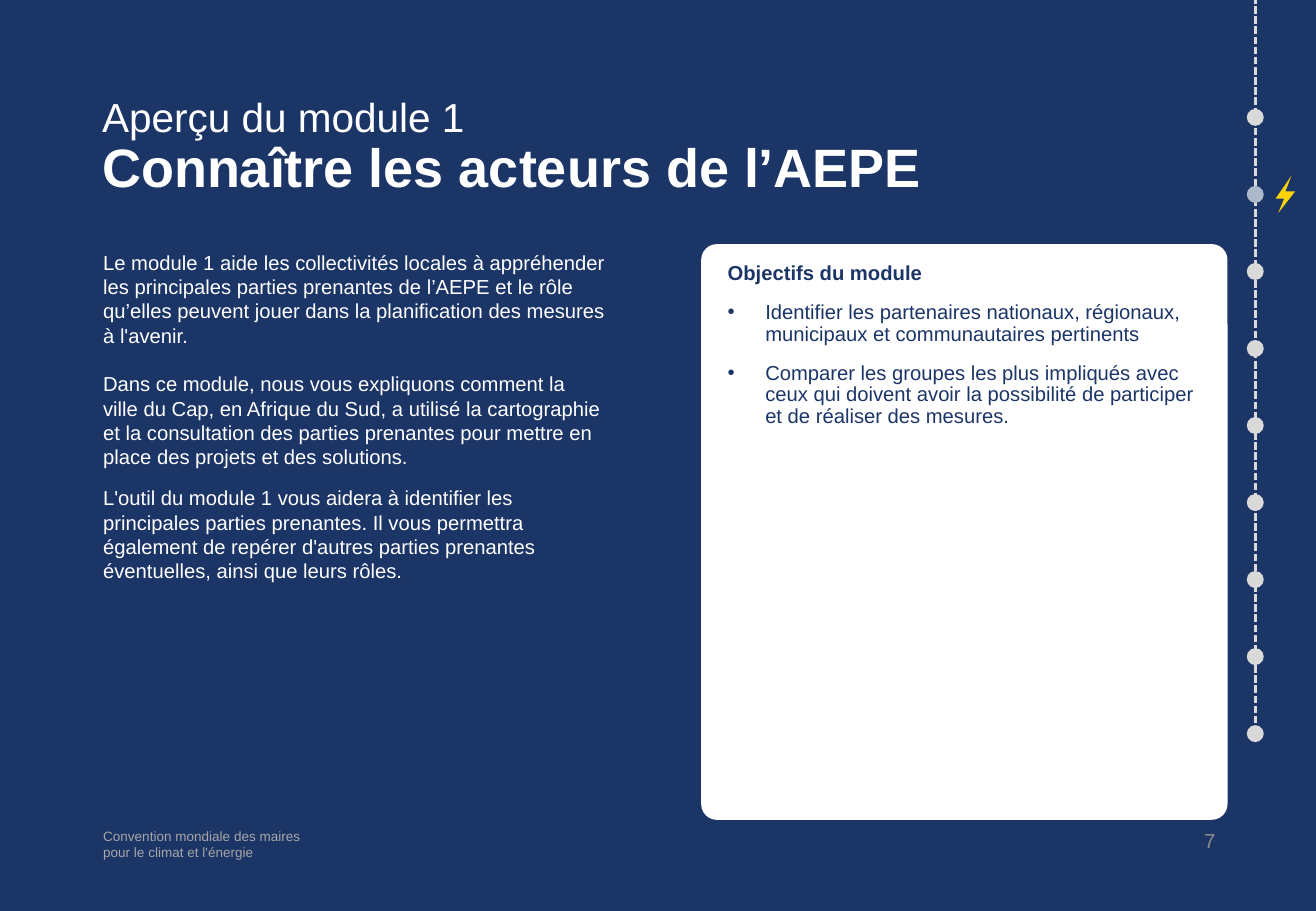
from dataclasses import dataclass

from lxml.etree import SubElement
from pptx import Presentation
from pptx.dml.color import RGBColor as RGB
from pptx.enum.dml import MSO_LINE as Dash
from pptx.enum.shapes import MSO_CONNECTOR as Link, MSO_SHAPE as Form
from pptx.enum.text import PP_ALIGN as Align
from pptx.oxml.ns import qn
from pptx.util import Inches, Pt


@dataclass(frozen=True)
class Theme:
    font: str = "Arial"
    navy: str = "1C3567"
    white: str = "FFFFFF"
    rail: str = "D9D9D9"
    stop: str = "ADB9CA"
    bolt: str = "FAD307"
    foot: str = "A6A6A6"
    page: str = "8C8C8C"
    head: int = 32
    lead: int = 24
    body: int = 12
    note: int = 8
    gap: int = 10
    tight: float = 0.9


@dataclass(frozen=True)
class Box:
    x: int
    y: int
    w: int
    h: int


THEME = Theme()
WIDTH, HEIGHT = Inches(10.83), Inches(7.5)
STOPS, ACTIVE = 9, 1
BOLT = [(0, 61), (81, 0), (50, 42), (100, 42), (13, 100), (44, 61)]

TITLE = ("Aperçu du module 1", "Connaître les acteurs de l’AEPE")
INTRO = [
    "Le module 1 aide les collectivités locales à appréhender les principales "
    "parties prenantes de l’AEPE et le rôle qu’elles peuvent jouer dans la "
    "planification des mesures à l'avenir.",
    "Dans ce module, nous vous expliquons comment la ville du Cap, en Afrique "
    "du Sud, a utilisé la cartographie et la consultation des parties "
    "prenantes pour mettre en place des projets et des solutions.",
    "L'outil du module 1 vous aidera à identifier les principales parties "
    "prenantes. Il vous permettra également de repérer d'autres parties "
    "prenantes éventuelles, ainsi que leurs rôles.",
]
GAPS = [0, 14.4, THEME.gap]
GOALS = [
    "Identifier les partenaires nationaux, régionaux, municipaux et "
    "communautaires pertinents",
    "Comparer les groupes les plus impliqués avec ceux qui doivent avoir la "
    "possibilité de participer et de réaliser des mesures.",
]
FOOT = "Convention mondiale des maires\vpour le climat et l'énergie"


def area(x, y, w, h):
    """Box given in percent of the slide's width and height."""
    return Box(*(int(part * side / 100) for part, side in
                 ((x, WIDTH), (y, HEIGHT), (w, WIDTH), (h, HEIGHT))))


def style(font, size, color, bold=False):
    font.name, font.size, font.bold = THEME.font, Pt(size), bold
    font.color.rgb = RGB.from_string(color)


def paint(shape, color):
    shape.shadow.inherit = False
    shape.fill.solid()
    shape.fill.fore_color.rgb = RGB.from_string(color)
    shape.line.fill.background()


def frame(slide, box):
    text = slide.shapes.add_textbox(box.x, box.y, box.w, box.h).text_frame
    text.word_wrap = True
    return text


def write(text, lines, size, color, gaps=(0,)):
    for i, (line, gap) in enumerate(zip(lines, gaps)):
        para = text.add_paragraph() if i else text.paragraphs[0]
        para.text = line
        para.space_before = Pt(gap)
        style(para.font, size, color)
    return text.paragraphs


def bullet(para):
    props = para._p.get_or_add_pPr()
    props.set("marL", str(Inches(0.31)))
    props.set("indent", str(-Inches(0.31)))
    SubElement(props, qn("a:buFont"), typeface=THEME.font)
    SubElement(props, qn("a:buChar"), char="•")


def title(slide, box):
    para = frame(slide, box).paragraphs[0]
    para.line_spacing = THEME.tight
    lead = para.add_run()
    lead.text = TITLE[0]
    style(lead.font, THEME.lead, THEME.white)
    para.add_line_break()
    head = para.add_run()
    head.text = TITLE[1]
    style(head.font, THEME.head, THEME.white, True)


def intro(slide, box):
    write(frame(slide, box), INTRO, THEME.body, THEME.white, GAPS)


def goals(slide, box):
    """White card with the module's objectives."""
    card = slide.shapes.add_shape(Form.ROUNDED_RECTANGLE,
                                  box.x, box.y, box.w, box.h)
    card.adjustments[0] = 0.03
    paint(card, THEME.white)
    text = card.text_frame
    text.word_wrap = True
    text.vertical_anchor = 1
    text.margin_left, text.margin_right = Inches(0.18), Inches(0.22)
    text.margin_top = text.margin_bottom = Inches(0.12)
    lines = ["Objectifs du module", *GOALS]
    paras = write(text, lines, THEME.body, THEME.navy,
                  [0] + [THEME.gap] * len(GOALS))
    for para in paras:
        para.alignment = Align.LEFT
        para.line_spacing = THEME.tight
    paras[0].font.bold = True
    for para in paras[1:]:
        bullet(para)


def bolt(slide, x, y, w, h):
    dots = [(x + w * u / 100, y + h * v / 100) for u, v in BOLT]
    path = slide.shapes.build_freeform(*map(int, dots[0]))
    path.add_line_segments([tuple(map(int, dot)) for dot in dots[1:]])
    paint(path.convert_to_shape(), THEME.bolt)


def rail(slide, box):
    """Dashed track of stops, with a bolt beside the active one."""
    size, mid = box.w, box.x + box.w // 2
    line = slide.shapes.add_connector(Link.STRAIGHT, mid, box.y + box.h,
                                      mid, box.y)
    line.line.color.rgb = RGB.from_string(THEME.rail)
    line.line.width = Pt(1.5)
    line.line.dash_style = Dash.SQUARE_DOT
    SubElement(line._element.spPr, qn("a:effectLst"))
    first = 0.16 * box.h
    step = (box.h - first) / (STOPS - 1)
    for i in range(STOPS):
        y = box.y + int(first + i * step)
        dot = slide.shapes.add_shape(Form.OVAL, box.x, y - size // 2,
                                     size, size)
        paint(dot, THEME.stop if i == ACTIVE else THEME.rail)
        if i == ACTIVE:
            bolt(slide, box.x + 1.7 * size, y - 1.1 * size,
                 1.15 * size, 2.2 * size)


def footer(slide, box):
    write(frame(slide, box), [FOOT], THEME.note, THEME.foot)


def number(slide, box):
    para = write(frame(slide, box), ["7"], THEME.body, THEME.page)[0]
    para.alignment = Align.RIGHT


def main():
    deck = Presentation()
    deck.slide_width, deck.slide_height = WIDTH, HEIGHT
    slide = deck.slides.add_slide(deck.slide_layouts[6])
    back = slide.background.fill
    back.solid()
    back.fore_color.rgb = RGB.from_string(THEME.navy)
    title(slide, area(6.85, 10, 86.24, 14.4))
    intro(slide, area(6.93, 26.8, 40, 63.47))
    goals(slide, area(53.28, 26.8, 40, 63.2))
    rail(slide, area(94.74, 0, 1.29, 80.53))
    footer(slide, area(6.93, 90.27, 16.9, 5.33))
    number(slide, area(88.46, 90.27, 4.8, 5.33))
    deck.save("out.pptx")


if __name__ == "__main__":
    main()
